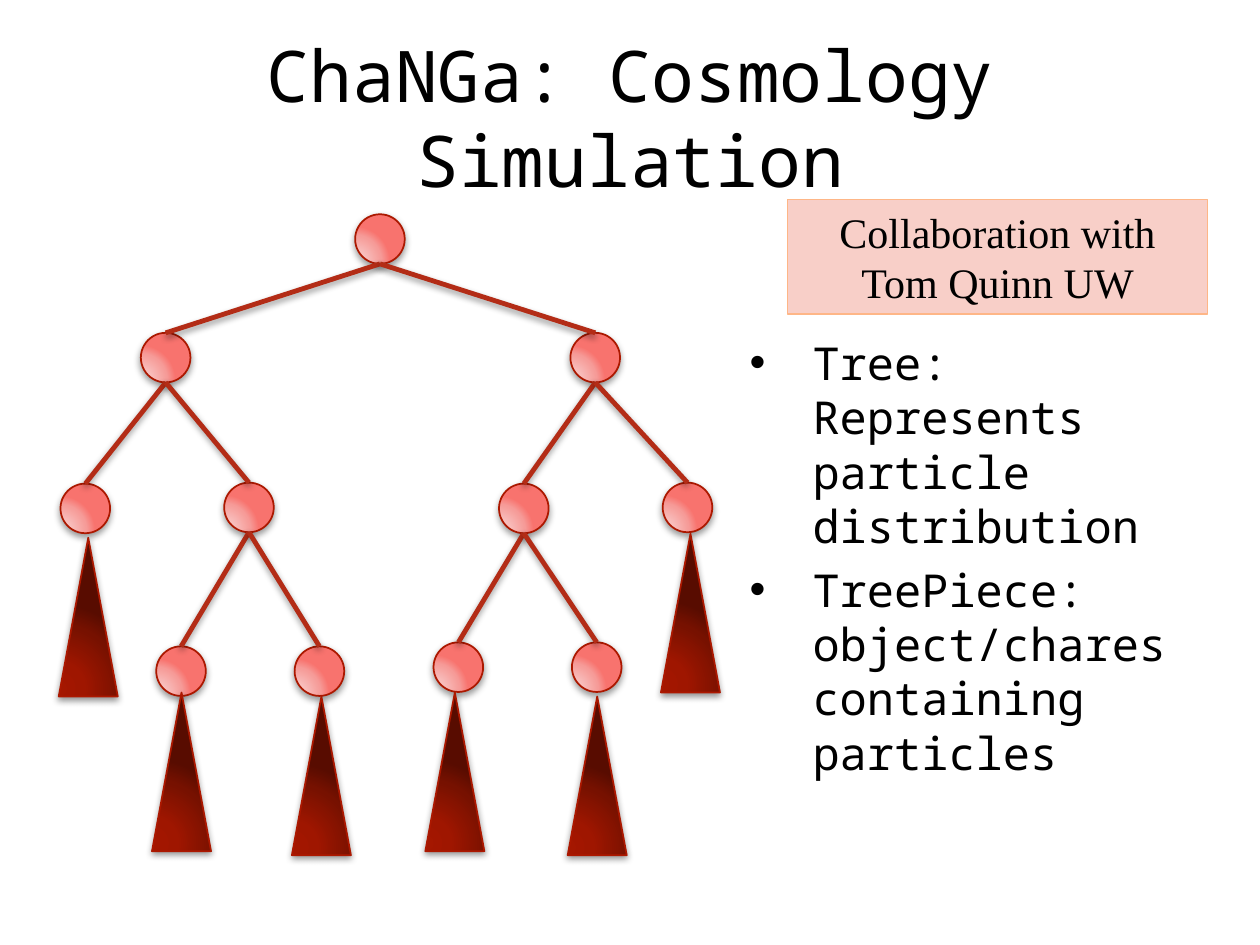
from dataclasses import dataclass

import pptx
import pptx.dml.color
import pptx.enum.shapes
import pptx.enum.text
import pptx.oxml
import pptx.util
from pptx.util import Cm, Pt

NAMESPACE = 'xmlns:a="http://schemas.openxmlformats.org/drawingml/2006/main"'


@dataclass(frozen=True)
class Theme:
    mono: str = "Noto Sans Mono"
    serif: str = "Times New Roman"
    title_size: float = 40.7
    body_size: float = 25.9
    note_size: float = 24
    text: str = "000000"
    outline: str = "AC1800"
    branch: str = "B32C16"
    note_fill: str = "F8CFC8"
    note_line: str = "FEB687"
    node_stops: tuple = ((0, "F8C5C3"), (30, "F8BFBD"), (75, "F69B98"), (100, "F8736E"))
    piece_stops: tuple = ((0, "A41700"), (30, "9F1600"), (75, "771100"), (100, "580C00"))


THEME = Theme()

# Node: (centre x, top y) in cm within the tree box; each name extends its parent's name
NODES = {
    "T": (6.47, 0.02),
    "TL": (2.15, 2.41), "TR": (10.81, 2.41),
    "TLL": (0.53, 5.45), "TLR": (3.83, 5.43),
    "TRL": (9.37, 5.45), "TRR": (12.67, 5.43),
    "TLRL": (2.46, 8.73), "TLRR": (5.25, 8.73),
    "TRLL": (8.05, 8.65), "TRLR": (10.84, 8.65),
}
# Tree piece: (apex x, apex y) in cm within the tree box
PIECES = [(12.73, 6.46), (10.85, 9.74), (7.98, 9.66),
          (5.29, 9.74), (2.47, 9.66), (0.59, 6.54)]
NODE_SIZE = 1.0
PIECE_WIDTH, PIECE_HEIGHT = 1.19, 3.2


def color(value):
    return pptx.dml.color.RGBColor.from_string(value)


def add_shadow(shape, opacity, distance):
    """Give the shape a soft shadow straight below it."""
    shape._element.spPr.append(pptx.oxml.parse_xml(
        f'<a:effectLst {NAMESPACE}><a:outerShdw blurRad="{Pt(4)}" dist="{Pt(distance)}" '
        f'dir="5400000" rotWithShape="0"><a:srgbClr val="000000">'
        f'<a:alpha val="{opacity * 1000}"/></a:srgbClr></a:outerShdw></a:effectLst>'))


def fill_radial(shape, stops):
    """Fill with a circular gradient centred near the lower left."""
    stop_xml = "".join(f'<a:gs pos="{position * 1000}"><a:srgbClr val="{value}"/></a:gs>'
                       for position, value in stops)
    shape._element.spPr.find(pptx.oxml.ns.qn("a:prstGeom")).addnext(pptx.oxml.parse_xml(
        f'<a:gradFill {NAMESPACE} rotWithShape="1"><a:gsLst>{stop_xml}</a:gsLst>'
        '<a:path path="circle"><a:fillToRect l="5000" t="100000" r="120000" b="10000"/>'
        '</a:path></a:gradFill>'))


def add_tree_shape(slide, kind, box, stops, opacity, distance):
    shape = slide.shapes.add_shape(kind, *map(Cm, box))
    fill_radial(shape, stops)
    shape.line.color.rgb = color(THEME.outline)
    shape.line.width = Pt(1)
    add_shadow(shape, opacity, distance)


def add_branch(slide, start, end):
    connector = slide.shapes.add_connector(
        pptx.enum.shapes.MSO_CONNECTOR.STRAIGHT, *map(Cm, start + end))
    connector.line.color.rgb = color(THEME.branch)
    connector.line.width = Pt(2.75)
    add_shadow(connector, 42, 1.6)


def add_tree(slide, left, top):
    kinds = pptx.enum.shapes.MSO_SHAPE
    for x, y in NODES.values():
        box = (left + x - NODE_SIZE / 2, top + y, NODE_SIZE, NODE_SIZE)
        add_tree_shape(slide, kinds.OVAL, box, THEME.node_stops, 40, 2)
    for x, y in PIECES:
        box = (left + x - PIECE_WIDTH / 2, top + y, PIECE_WIDTH, PIECE_HEIGHT)
        add_tree_shape(slide, kinds.ISOSCELES_TRIANGLE, box, THEME.piece_stops, 42, 1.6)
    for name, (x, y) in NODES.items():
        if name[:-1] in NODES:
            parent_x, parent_y = NODES[name[:-1]]
            add_branch(slide, (left + parent_x, top + parent_y + NODE_SIZE),
                       (left + x, top + y))


def style_text(paragraph, font_name, size):
    for run in paragraph.runs:
        run.font.name = font_name
        run.font.size = Pt(size)
        run.font.color.rgb = color(THEME.text)


def add_title(slide, box, text):
    frame = slide.shapes.add_textbox(*map(Cm, box)).text_frame
    frame.word_wrap = True
    frame.vertical_anchor = pptx.enum.text.MSO_ANCHOR.MIDDLE
    frame.text = text
    paragraph = frame.paragraphs[0]
    paragraph.alignment = pptx.enum.text.PP_ALIGN.CENTER
    style_text(paragraph, THEME.mono, THEME.title_size)


def add_bullets(slide, box, items):
    frame = slide.shapes.add_textbox(*map(Cm, box)).text_frame
    frame.word_wrap = True
    frame.text = "\n".join(items)
    for index, paragraph in enumerate(frame.paragraphs):
        properties = paragraph._p.get_or_add_pPr()
        properties.set("marL", str(Cm(1.27)))
        properties.set("indent", str(-Cm(1.27)))
        for bullet in ('buFont {} typeface="Arial"', 'buChar {} char="•"'):
            properties.append(pptx.oxml.parse_xml(f"<a:{bullet.format(NAMESPACE)}/>"))
        if index:
            paragraph.space_before = Pt(5.2)
        style_text(paragraph, THEME.mono, THEME.body_size)


def add_note(slide, box, text):
    shape = slide.shapes.add_shape(pptx.enum.shapes.MSO_SHAPE.RECTANGLE, *map(Cm, box))
    shape.shadow.inherit = False
    shape.fill.solid()
    shape.fill.fore_color.rgb = color(THEME.note_fill)
    shape.line.color.rgb = color(THEME.note_line)
    shape.line.width = Pt(0.75)
    shape.text_frame.word_wrap = True
    shape.text_frame.text = text
    paragraph = shape.text_frame.paragraphs[0]
    paragraph.alignment = pptx.enum.text.PP_ALIGN.CENTER
    style_text(paragraph, THEME.serif, THEME.note_size)


def main():
    presentation = pptx.Presentation()
    presentation.slide_width, presentation.slide_height = Cm(25.4), Cm(19.05)
    slide = presentation.slides.add_slide(presentation.slide_layouts[6])
    add_tree(slide, 1.19, 4.3)
    add_title(slide, (1.27, 0.76, 22.86, 3.18), "ChaNGa: Cosmology Simulation")
    add_bullets(slide, (14.86, 6.63, 10.54, 6.17),
                ["Tree: Represents particle distribution",
                 "TreePiece: object/chares containing particles"])
    add_note(slide, (15.88, 4.02, 8.46, 2.31), "Collaboration with Tom Quinn UW")
    presentation.save("out.pptx")


if __name__ == "__main__":
    main()
